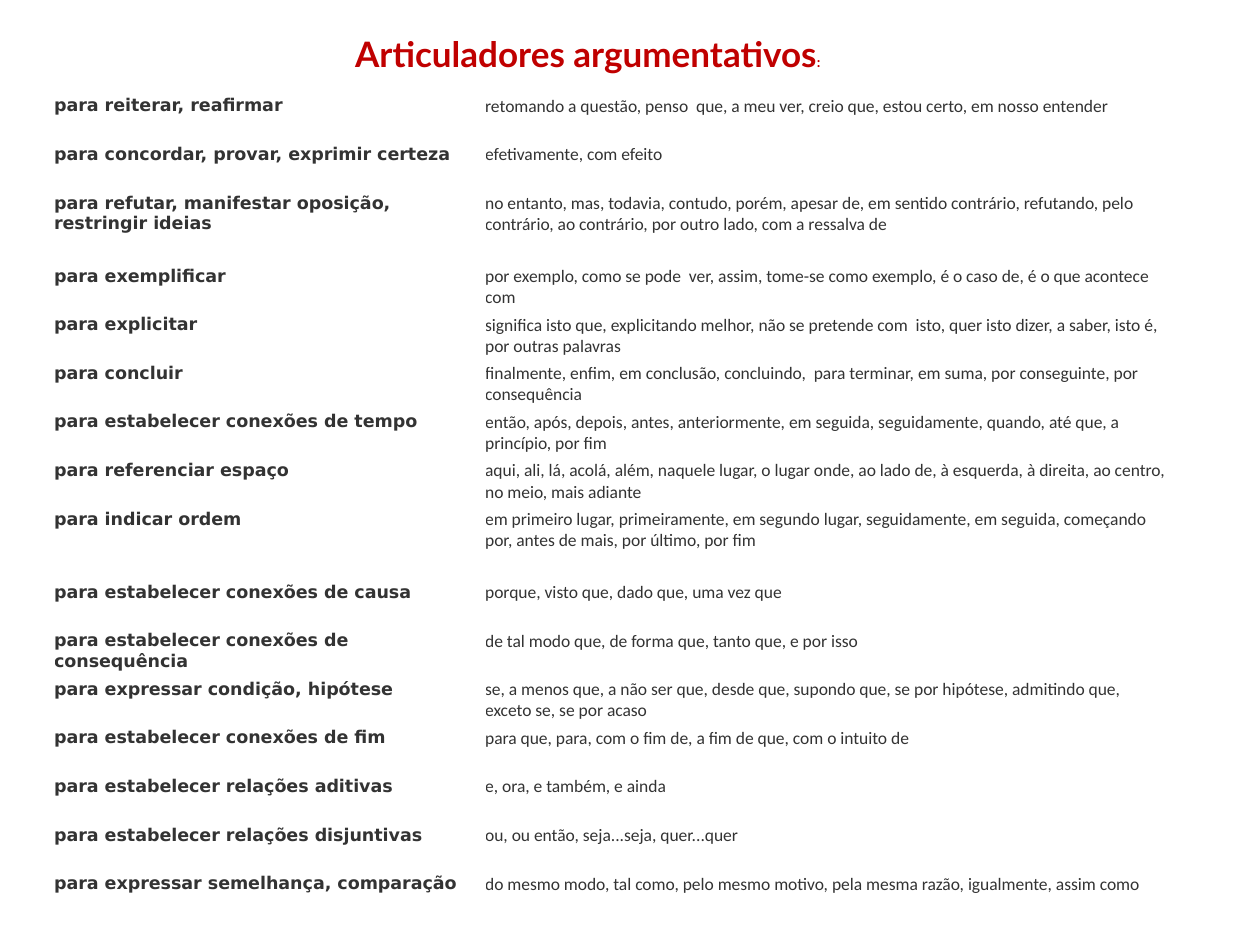
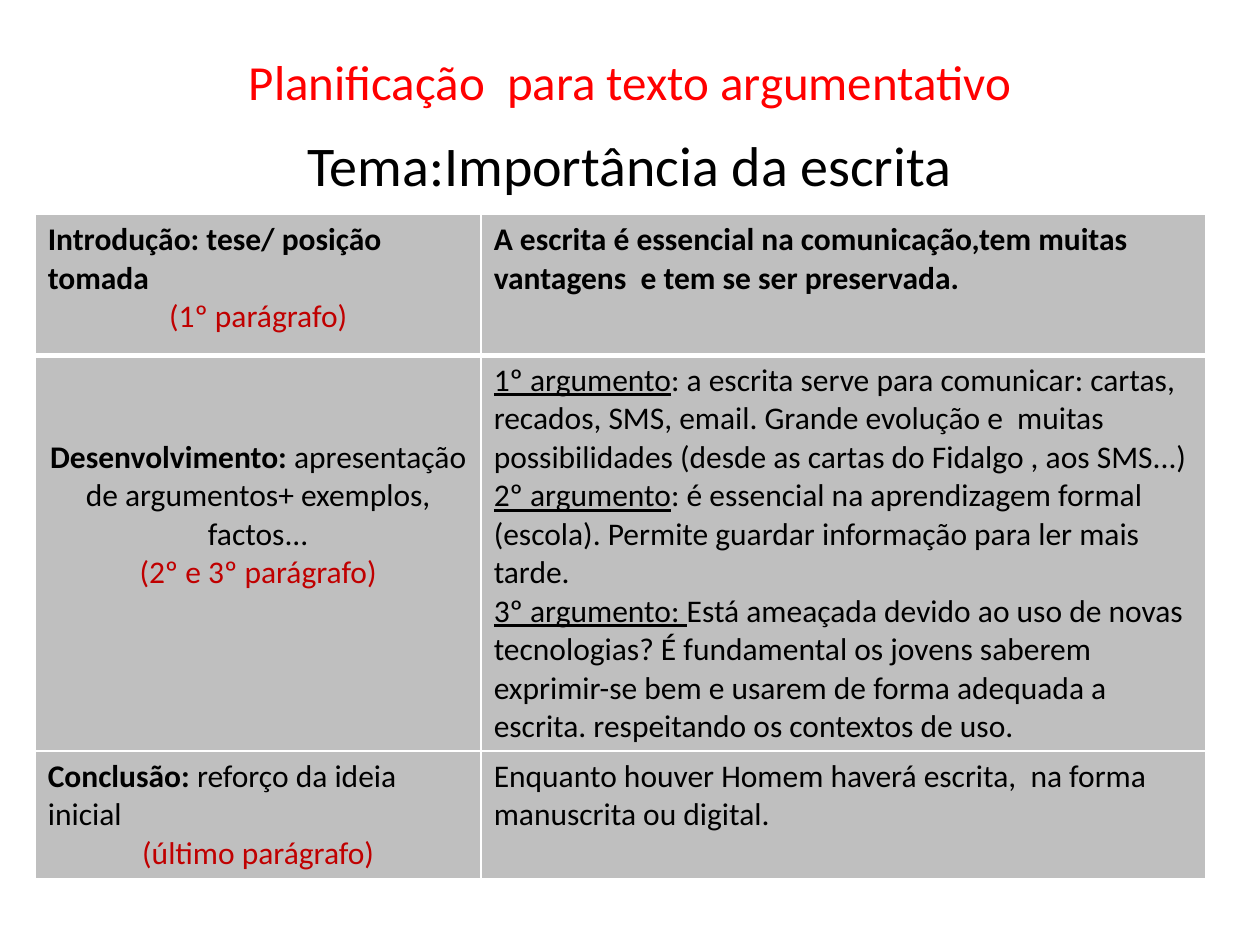
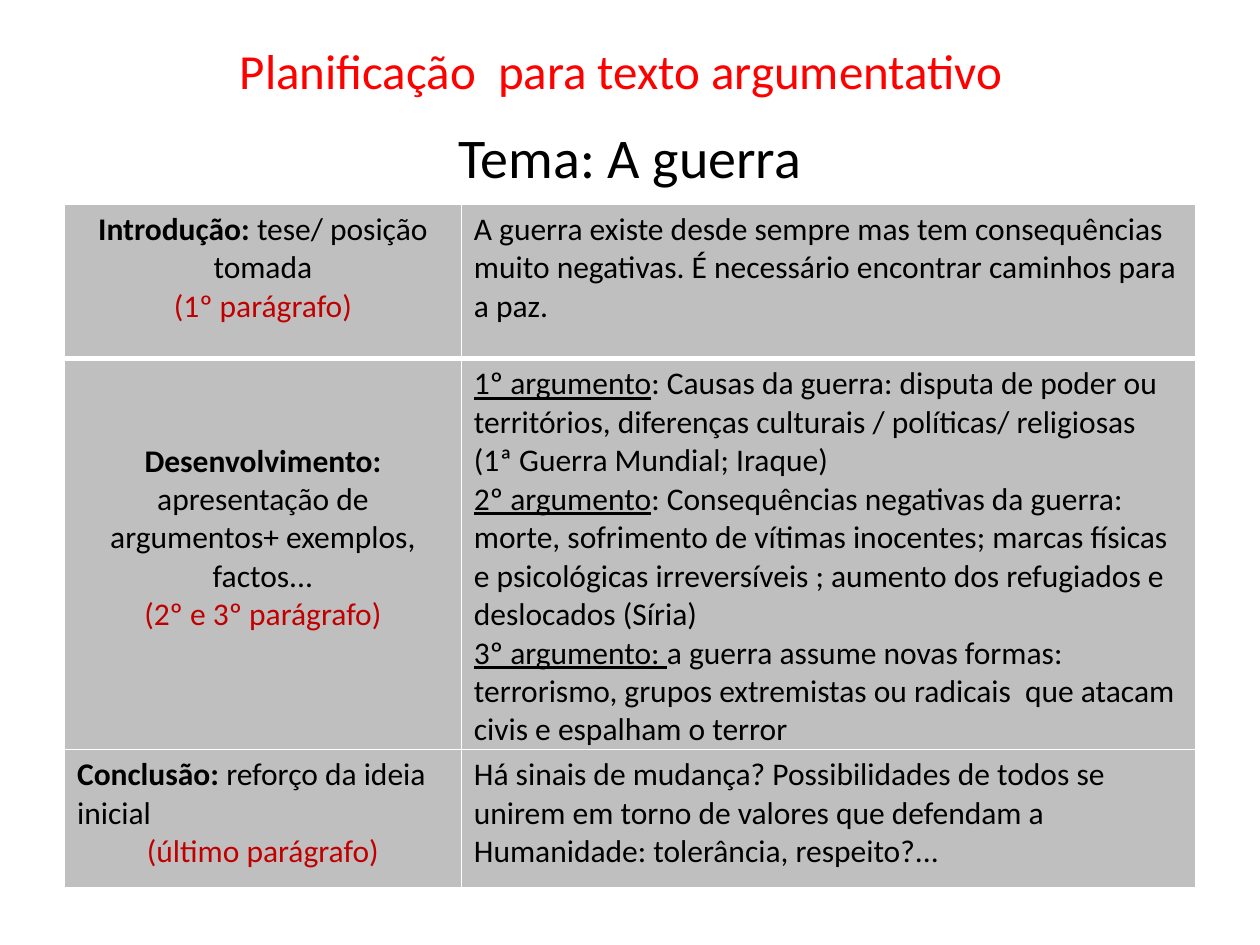
import dataclasses

import lxml.etree
import pptx
import pptx.dml.color
import pptx.enum.text
import pptx.oxml.ns
import pptx.util

Cm = pptx.util.Cm
LEFT = pptx.enum.text.PP_ALIGN.LEFT
CENTER = pptx.enum.text.PP_ALIGN.CENTER
TOP = pptx.enum.text.MSO_ANCHOR.TOP
MIDDLE = pptx.enum.text.MSO_ANCHOR.MIDDLE


@dataclasses.dataclass(frozen=True)
class Theme:
    body_font: str = "Calibri"
    label_font: str = "DejaVu Sans"
    heading_font: str = "Lato"
    black: str = "000000"
    grey_text: str = "333333"
    dark_red: str = "C00000"
    bright_red: str = "FF0000"
    cell_fill: str = "BFBFBF"
    border: str = "FFFFFF"
    connector_size: int = 10
    colon_size: int = 8
    heading_size: int = 20
    plan_size: int = 18
    title_size: int = 28
    topic_size: int = 32


THEME = Theme()


@dataclasses.dataclass(frozen=True)
class Piece:
    """A stretch of text with one look."""
    text: str
    size: int = THEME.plan_size
    color: str = THEME.black
    font: str = THEME.body_font
    bold: bool = False
    underline: bool = False


def strong(text):
    return Piece(text, bold=True)


def underlined(text):
    return Piece(text, underline=True)


def paragraph_note(text):
    return CENTER, [Piece(text, color=THEME.dark_red)]


# ---- Shared text and table parts ----
def write(frame, paragraphs):
    """Fill a text frame from (alignment, pieces) pairs."""
    for index, (alignment, pieces) in enumerate(paragraphs):
        paragraph = frame.add_paragraph() if index else frame.paragraphs[0]
        paragraph.alignment = alignment
        for piece in pieces:
            run = paragraph.add_run()
            run.text = piece.text
            run.font.name = piece.font
            run.font.size = pptx.util.Pt(piece.size)
            run.font.bold = piece.bold
            run.font.underline = piece.underline
            run.font.color.rgb = pptx.dml.color.RGBColor.from_string(piece.color)


def add_text(slide, box, alignment, pieces, anchor=TOP, wrap=True):
    frame = slide.shapes.add_textbox(*map(Cm, box)).text_frame
    frame.word_wrap = wrap
    frame.vertical_anchor = anchor
    write(frame, [(alignment, pieces)])


def add_grid(slide, corner, widths, heights):
    """Add a plain table with the given column widths and row heights in cm."""
    box = (*corner, sum(widths), sum(heights))
    grid = slide.shapes.add_table(len(heights), len(widths), *map(Cm, box)).table
    grid.first_row = grid.horz_banding = False
    for column, width in zip(grid.columns, widths):
        column.width = Cm(width)
    for row, height in zip(grid.rows, heights):
        row.height = Cm(height)
    return grid


def set_border(cell, side, points):
    properties = cell._tc.get_or_add_tcPr()
    qn = pptx.oxml.ns.qn
    line = lxml.etree.Element(qn(f"a:ln{side}"), w=str(pptx.util.Pt(points)))
    fill = lxml.etree.SubElement(line, qn("a:solidFill"))
    lxml.etree.SubElement(fill, qn("a:srgbClr"), val=THEME.border)
    # Borders come before the fill, in the order L, R, T, B
    properties.insert("LRTB".index(side), line)


# ---- Connector list ----
ROW_HEIGHT = 0.98
CONNECTORS = [
    ("para reiterar, reafirmar",
     "retomando a questão, penso  que, a meu ver, creio que, estou certo, em nosso entender"),
    ("para concordar, provar, exprimir certeza", "efetivamente, com efeito"),
    ("para refutar, manifestar oposição, restringir ideias",
     "no entanto, mas, todavia, contudo, porém, apesar de, em sentido contrário, refutando, "
     "pelo contrário, ao contrário, por outro lado, com a ressalva de"),
    ("para exemplificar",
     "por exemplo, como se pode  ver, assim, tome-se como exemplo, é o caso de, "
     "é o que acontece com"),
    ("para explicitar",
     "significa isto que, explicitando melhor, não se pretende com  isto, quer isto dizer, "
     "a saber, isto é, por outras palavras"),
    ("para concluir",
     "finalmente, enfim, em conclusão, concluindo,  para terminar, em suma, "
     "por conseguinte, por consequência"),
    ("para estabelecer conexões de tempo",
     "então, após, depois, antes, anteriormente, em seguida, seguidamente, quando, "
     "até que, a princípio, por fim"),
    ("para referenciar espaço",
     "aqui, ali, lá, acolá, além, naquele lugar, o lugar onde, ao lado de, à esquerda, "
     "à direita, ao centro, no meio, mais adiante"),
    ("para indicar ordem",
     "em primeiro lugar, primeiramente, em segundo lugar, seguidamente, em seguida, "
     "começando por, antes de mais, por último, por fim"),
    ("para estabelecer conexões de causa", "porque, visto que, dado que, uma vez que"),
    ("para estabelecer conexões de consequência",
     "de tal modo que, de forma que, tanto que, e por isso"),
    ("para expressar condição, hipótese",
     "se, a menos que, a não ser que, desde que, supondo que, se por hipótese, "
     "admitindo que, exceto se, se por acaso"),
    ("para estabelecer conexões de fim",
     "para que, para, com o fim de, a fim de que, com o intuito de"),
    ("para estabelecer relações aditivas", "e, ora, e também, e ainda"),
    ("para estabelecer relações disjuntivas", "ou, ou então, seja...seja, quer...quer"),
    ("para expressar semelhança, comparação",
     "do mesmo modo, tal como, pelo mesmo motivo, pela mesma razão, igualmente, assim como"),
]
TALL_ROWS = ("para refutar, manifestar oposição, restringir ideias", "para indicar ordem")


def connectors_table(slide, corner, widths):
    heights = [ROW_HEIGHT * (1.5 if purpose in TALL_ROWS else 1) for purpose, _ in CONNECTORS]
    grid = add_grid(slide, corner, widths, heights)
    looks = ((THEME.label_font, True), (THEME.body_font, False))
    for row, texts in zip(grid.rows, CONNECTORS):
        for cell, text, (font, bold) in zip(row.cells, texts, looks):
            cell.fill.background()
            cell.margin_left = cell.margin_right = cell.margin_top = cell.margin_bottom = 0
            piece = Piece(text, THEME.connector_size, THEME.grey_text, font, bold)
            write(cell.text_frame, [(LEFT, [piece])])


def connectors_slide(slide):
    heading = [Piece(text, size, THEME.dark_red, THEME.heading_font, True)
               for text, size in (("Articuladores argumentativos", THEME.heading_size),
                                  (":", THEME.colon_size))]
    connectors_table(slide, (1.09, 1.93), (8.69, 13.72))
    add_text(slide, (6.91, 0.53, 11.23, 1.88), LEFT, heading, wrap=False)


# ---- Writing plans ----
DEVELOPMENT = [
    (CENTER, [strong("Desenvolvimento: "),
              Piece("apresentação de argumentos+ exemplos, factos...")]),
    paragraph_note("(2º e 3º parágrafo)"),
]
CONCLUSION = [
    (LEFT, [strong("Conclusão: "), Piece("reforço da ideia inicial")]),
    paragraph_note("(último parágrafo)"),
]
INTRODUCTION_NOTE = paragraph_note("(1º parágrafo)")


def argument(label, text):
    return LEFT, [underlined(label), Piece(text)]


def plan_table(slide, corner, widths, heights, introduction, contents):
    grid = add_grid(slide, corner, widths, heights)
    stages = ([introduction, INTRODUCTION_NOTE], DEVELOPMENT, CONCLUSION)
    for index, texts in enumerate(zip(stages, contents)):
        for cell, paragraphs in zip(grid.rows[index].cells, texts):
            cell.fill.solid()
            cell.fill.fore_color.rgb = pptx.dml.color.RGBColor.from_string(THEME.cell_fill)
            for side in "LRTB":
                # A thicker rule separates the introduction from the rest
                thick = (index, side) in ((0, "B"), (1, "T"))
                set_border(cell, side, 3 if thick else 1)
            write(cell.text_frame, paragraphs)
    # The development label starts two lines down
    grid.cell(1, 0).margin_top = Cm(1.68)


def plan_slide(slide, title_box, topic_box, topic, **plan):
    add_text(slide, title_box, CENTER,
             [Piece("Planificação  para texto argumentativo", THEME.title_size,
                    THEME.bright_red)], MIDDLE)
    add_text(slide, topic_box, CENTER, [Piece(topic, THEME.topic_size)])
    plan_table(slide, **plan)


def writing_slide(slide):
    plan_slide(
        slide, (1.27, 0.76, 22.86, 1.75), (1.27, 2.51, 22.86, 14.5),
        "Tema:Importância da escrita",
        corner=(0.71, 4.32), widths=(8.99, 14.61), heights=(2.84, 7.98, 2.57),
        introduction=(LEFT, [strong("Introdução: tese/ posição tomada")]),
        contents=(
            [(LEFT, [strong("A escrita é essencial na comunicação,tem muitas vantagens  "
                            "e tem se ser preservada.")])],
            [argument("1º argumento",
                      ": a escrita serve para comunicar: cartas, recados, SMS, email. Grande "
                      "evolução e  muitas possibilidades (desde as cartas do Fidalgo , "
                      "aos SMS...)"),
             argument("2º argumento", ": é essencial na aprendizagem formal"),
             (LEFT, [Piece("(escola). Permite guardar informação para ler mais tarde.")]),
             argument("3º argumento: ",
                      "Está ameaçada devido ao uso de novas tecnologias? É fundamental os "
                      "jovens saberem exprimir-se bem e usarem de forma adequada a escrita. "
                      "respeitando os contextos de uso.")],
            [(LEFT, [Piece("Enquanto houver Homem haverá escrita,  na forma  "
                           "manuscrita ou digital.")])],
        ))


def war_slide(slide):
    plan_slide(
        slide, (1.09, 0.53, 22.86, 1.75), (1.27, 2.34, 22.86, 14.68),
        "Tema: A guerra",
        corner=(1.3, 4.11), widths=(8, 14.81), heights=(3.12, 7.82, 2.79),
        introduction=(CENTER, [strong("Introdução: "), Piece("tese/ posição tomada")]),
        contents=(
            [(LEFT, [Piece("A guerra existe desde sempre mas tem consequências muito "
                           "negativas. É necessário encontrar caminhos para a paz.")])],
            [argument("1º argumento",
                      ": Causas da guerra: disputa de poder ou  territórios, diferenças "
                      "culturais / políticas/ religiosas  (1ª Guerra Mundial; Iraque)"),
             argument("2º argumento",
                      ": Consequências negativas da guerra: morte, sofrimento de vítimas "
                      "inocentes; marcas físicas e psicológicas irreversíveis ; aumento dos "
                      "refugiados e deslocados (Síria)"),
             argument("3º argumento: ",
                      "a guerra assume novas formas: terrorismo, grupos extremistas ou "
                      "radicais  que atacam  civis e espalham o terror")],
            [(LEFT, [Piece("Há sinais de mudança? Possibilidades de todos se unirem em torno "
                           "de valores que defendam a Humanidade: tolerância, "
                           "respeito?...")])],
        ))


def main():
    deck = pptx.Presentation()
    deck.slide_width, deck.slide_height = Cm(25.4), Cm(19.05)
    blank = deck.slide_layouts[6]
    for build in (connectors_slide, writing_slide, war_slide):
        build(deck.slides.add_slide(blank))
    deck.save("out.pptx")


if __name__ == "__main__":
    main()
